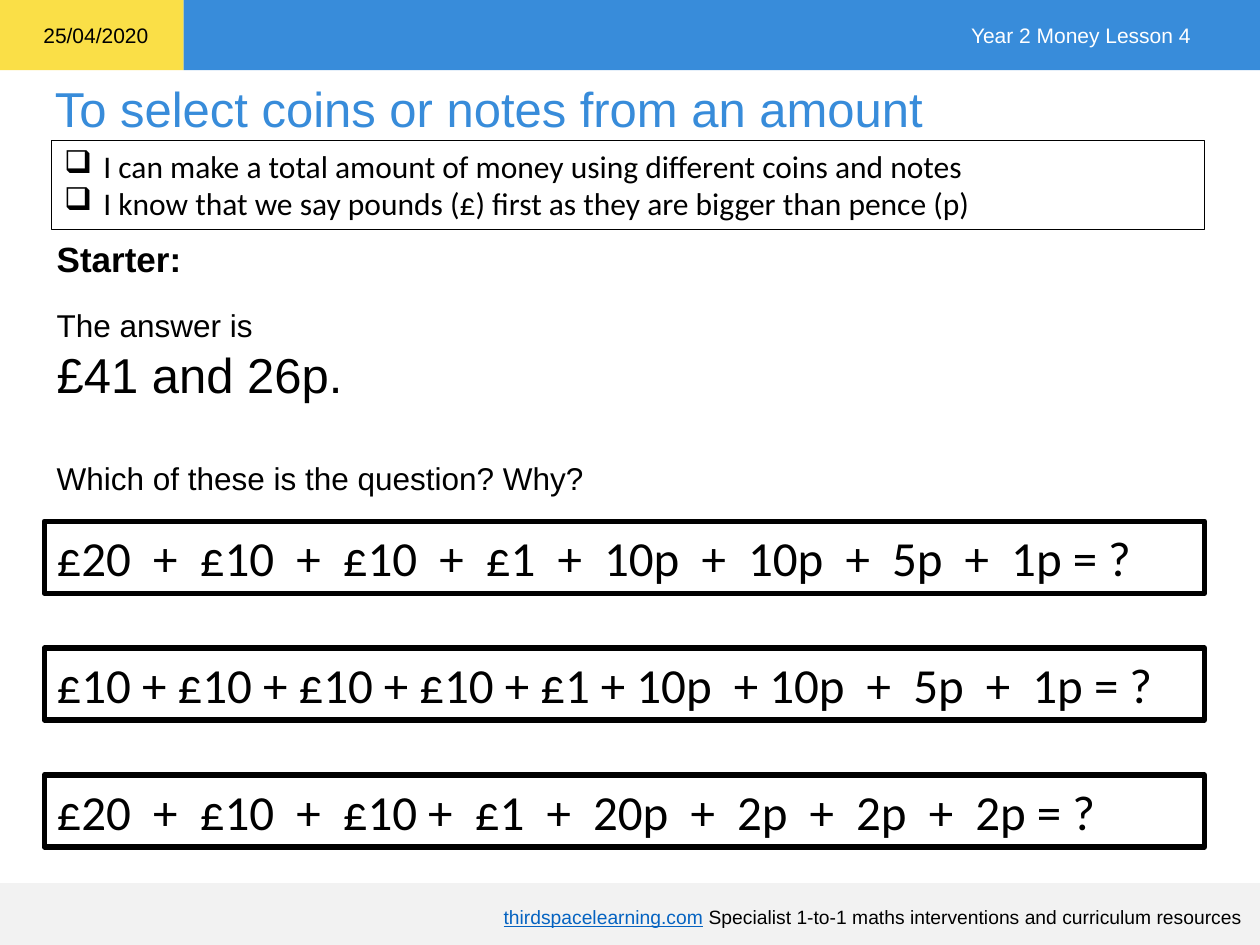
"""Builds a Year 2 maths starter slide on making money amounts."""
from lxml import etree
from pptx import Presentation
from pptx.dml.color import RGBColor
from pptx.enum.shapes import MSO_SHAPE
from pptx.enum.text import MSO_ANCHOR, PP_ALIGN
from pptx.oxml.ns import qn
from pptx.util import Pt

RECTANGLE = MSO_SHAPE.RECTANGLE
MIDDLE, TOP = MSO_ANCHOR.MIDDLE, MSO_ANCHOR.TOP
LEFT, RIGHT = PP_ALIGN.LEFT, PP_ALIGN.RIGHT

COLOURS = {
    "yellow": "FADF47",
    "blue": "388CDA",
    "grey": "F2F2F2",
    "link": "0563C1",
    "black": "000000",
    "white": "FFFFFF",
}
CRITERIA = [
    "I can make a total amount of money using different coins and notes",
    "I know that we say pounds (£) first as they are bigger than pence (p)",
]
SUMS = [
    "£20  +  £10  +  £10  +  £1  +  10p  +  10p  +  5p  +  1p = ?",
    "£10 + £10 + £10 + £10 + £1 + 10p  + 10p  +  5p  +  1p = ?",
    "£20  +  £10  +  £10 +  £1  +  20p  +  2p  +  2p  +  2p = ?",
]


def colour(name):
    return RGBColor.from_string(COLOURS[name])


def style(font, size, colour_name="black", face="Arial", bold=False):
    font.size = Pt(size)
    font.name = face
    font.bold = bold
    font.color.rgb = colour(colour_name)


def add_band(slide, left, top, width, height, fill):
    band = slide.shapes.add_shape(RECTANGLE, Pt(left), Pt(top), Pt(width), Pt(height))
    band.shadow.inherit = False
    band.fill.solid()
    band.fill.fore_color.rgb = colour(fill)
    band.line.fill.background()


def add_text(slide, left, top, width, height, lines, size,
             colour_name="black", align=LEFT, bold=False):
    box = slide.shapes.add_textbox(Pt(left), Pt(top), Pt(width), Pt(height))
    frame = box.text_frame
    frame.word_wrap = True
    frame.text = "\n".join(lines)
    for paragraph in frame.paragraphs:
        paragraph.alignment = align
        for run in paragraph.runs:
            style(run.font, size, colour_name, bold=bold)
    return frame


def add_outlined_box(slide, top, left, width, height, lines, size, border):
    box = slide.shapes.add_shape(RECTANGLE, Pt(left), Pt(top), Pt(width), Pt(height))
    box.shadow.inherit = False
    box.fill.background()
    box.line.color.rgb = colour("black")
    box.line.width = Pt(border)
    frame = box.text_frame
    frame.word_wrap = True
    frame.vertical_anchor = TOP
    frame.text = "\n".join(lines)
    for paragraph in frame.paragraphs:
        paragraph.alignment = LEFT
        for run in paragraph.runs:
            style(run.font, size, face="Calibri")
    return frame


def add_bullets(frame, symbol, indent):
    for paragraph in frame.paragraphs:
        properties = paragraph._p.get_or_add_pPr()
        properties.set("marL", str(Pt(indent)))
        properties.set("indent", str(-Pt(indent)))
        etree.SubElement(properties, qn("a:buChar")).set("char", symbol)


def add_footer(slide):
    add_band(slide, 0, 504.7, 720, 35.3, "grey")
    frame = add_text(slide, 30, 511, 687, 26, ["thirdspacelearning.com"], 11, "link", RIGHT)
    frame.vertical_anchor = MIDDLE
    website = frame.paragraphs[0].runs[0]
    website.font.underline = True
    tagline = frame.paragraphs[0].add_run()
    tagline.text = " Specialist 1-to-1 maths interventions and curriculum resources"
    style(tagline.font, 11)


def add_header(slide):
    date_width = 104.9
    add_band(slide, 0, 0, date_width, 40.1, "yellow")
    add_band(slide, date_width, 0, 720 - date_width, 40.1, "blue")
    add_text(slide, 17.7, 9.2, 85, 21.8, ["25/04/2020"], 12)
    add_text(slide, 500, 9.2, 187.6, 21.8, ["Year 2 Money Lesson 4"], 12, "white", RIGHT)
    add_text(slide, 24.3, 41.2, 650, 41.2,
             ["To select coins or notes from an amount"], 28, "blue")


def add_starter(slide):
    add_text(slide, 25.3, 132.4, 100, 31.5, ["Starter:"], 20, bold=True)
    lines = ["The answer is", "£41 and 26p.", "Which of these is the question? Why?"]
    frame = add_text(slide, 25.3, 171.5, 400, 119, lines, 18)
    answer, question = frame.paragraphs[1:]
    answer.runs[0].font.size = Pt(28)
    question.space_before = Pt(32.2)


def main():
    presentation = Presentation()
    presentation.slide_width = Pt(720)
    presentation.slide_height = Pt(540)
    slide = presentation.slides.add_slide(presentation.slide_layouts[6])
    add_header(slide)
    add_footer(slide)
    add_starter(slide)
    for row, money_sum in enumerate(SUMS):
        add_outlined_box(slide, 297.8 + 72.5 * row, 25.3, 663, 41.2, [money_sum], 28, 3)
    criteria = add_outlined_box(slide, 80.3, 29.5, 658.8, 50.9, CRITERIA, 18, 0.75)
    add_bullets(criteria, "❑", 22.5)
    presentation.save("out.pptx")


if __name__ == "__main__":
    main()
